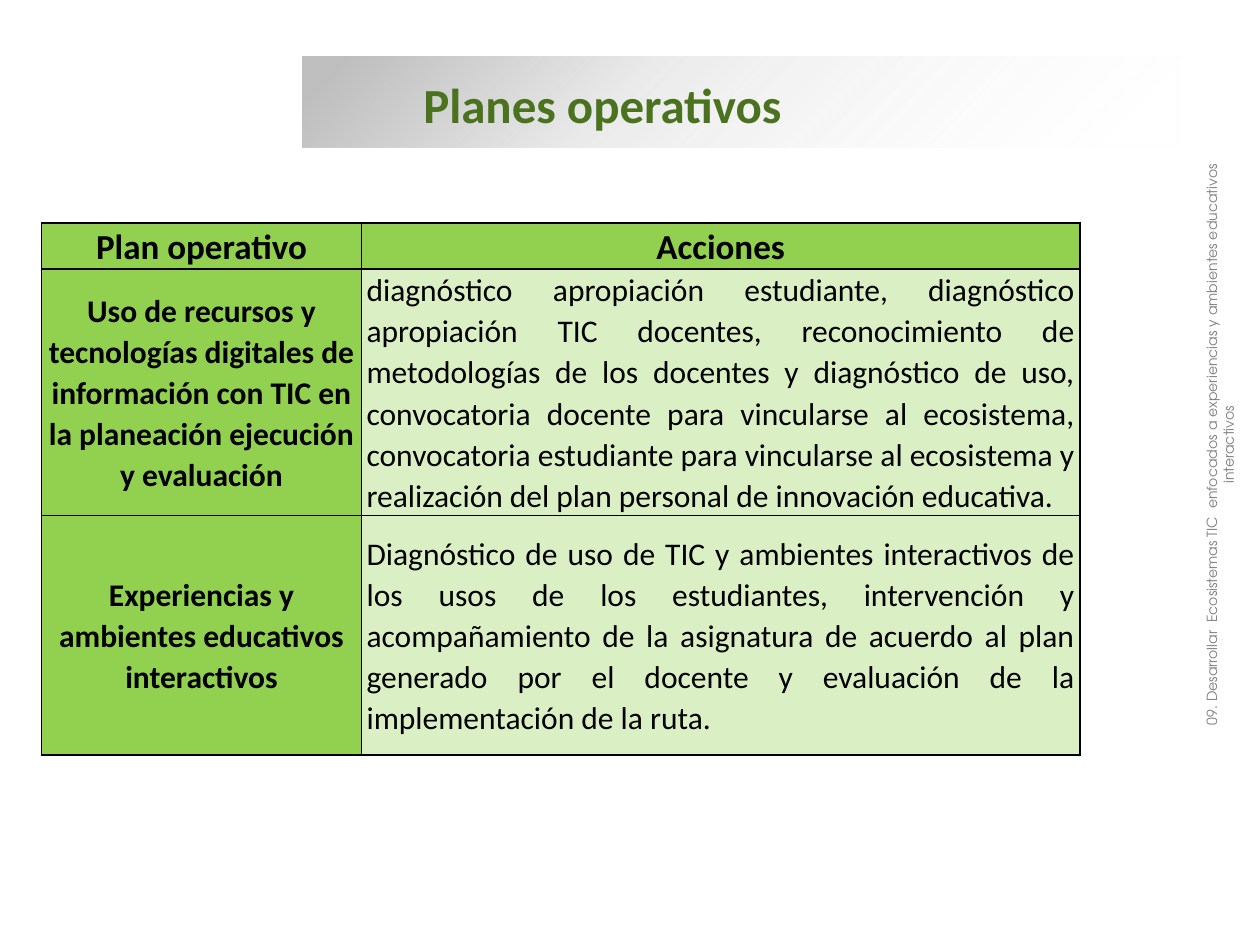
"""Builds the slide "Planes operativos" with its table of plans and actions."""
from dataclasses import dataclass

from lxml import etree
from pptx import Presentation
from pptx.dml.color import RGBColor
from pptx.enum import shapes, text
from pptx.oxml import ns
from pptx.util import Inches, Pt


@dataclass(frozen=True)
class Theme:
    """Colours, fonts and type sizes of the slide."""
    title: str = "4B731F"
    ink: str = "000000"
    muted: str = "808080"
    head_fill: str = "92D050"
    body_fill: str = "DAEFC3"
    band: str = "BFBFBF"
    white: str = "FFFFFF"
    font: str = "Calibri"
    side_font: str = "TeX Gyre Adventor"
    title_size: int = 28
    head_size: int = 20
    body_size: int = 18
    side_size: int = 8


@dataclass(frozen=True)
class Box:
    """A place on the slide in inches."""
    left: float
    top: float
    width: float
    height: float

    def emu(self) -> tuple:
        """Return left, top, width and height as lengths."""
        return tuple(Inches(v) for v in (self.left, self.top, self.width, self.height))


@dataclass(frozen=True)
class Stop:
    """A gradient stop with percentages for position and opacity."""
    pos: int
    color: str
    alpha: int = 100


@dataclass(frozen=True)
class Plan:
    """A table row: the plan and its actions."""
    name: str
    actions: str
    height: float


THEME = Theme()
COLUMNS = (2.54, 5.7)
PLANS = (
    Plan("Plan operativo", "Acciones", 0.36),
    Plan("Uso de recursos y tecnologías digitales de información con TIC en la "
         "planeación ejecución y evaluación",
         "diagnóstico apropiación estudiante, diagnóstico apropiación TIC docentes, "
         "reconocimiento de metodologías de los docentes y diagnóstico de uso, "
         "convocatoria docente para vincularse al ecosistema, convocatoria estudiante "
         "para vincularse al ecosistema y realización del plan personal de innovación "
         "educativa.", 1.93),
    Plan("Experiencias y ambientes educativos interactivos",
         "Diagnóstico de uso de TIC y ambientes interactivos de los usos de los "
         "estudiantes, intervención y acompañamiento de la asignatura de acuerdo al "
         "plan generado por el docente y evaluación de la implementación de la ruta.", 1.9),
)


def add_run(p, words: str, size: int, color: str, font: str, bold: bool = False) -> None:
    """Add one formatted run to a paragraph."""
    r = p.add_run()
    r.text = words
    r.font.size, r.font.name, r.font.bold = Pt(size), font, bold
    r.font.color.rgb = RGBColor.from_string(color)


def add_fill(parent, color: str, alpha: int = 100) -> None:
    """Add an sRGB colour with opacity to an XML element."""
    clr = etree.SubElement(parent, ns.qn("a:srgbClr"), val=color)
    if alpha < 100:
        etree.SubElement(clr, ns.qn("a:alpha"), val=str(alpha * 1000))


def add_band(s, box: Box, stops: tuple, angle: int):
    """Draw a gradient band behind everything else."""
    sp = s.shapes.add_shape(shapes.MSO_SHAPE.RECTANGLE, *box.emu())
    sp.shadow.inherit = False
    sp.line.fill.background()
    sp.fill.background()
    grad = etree.Element(ns.qn("a:gradFill"), rotWithShape="1")
    stop_list = etree.SubElement(grad, ns.qn("a:gsLst"))
    for stop in stops:
        gs = etree.SubElement(stop_list, ns.qn("a:gs"), pos=str(stop.pos * 1000))
        add_fill(gs, stop.color, stop.alpha)
    etree.SubElement(grad, ns.qn("a:lin"), ang=str(angle * 60000), scaled="0")
    props = sp._element.spPr
    props.replace(props.find(ns.qn("a:noFill")), grad)
    s.shapes._spTree.insert(2, sp._element)
    return sp


def set_title(s, words: str, box: Box) -> None:
    """Place and format the title placeholder."""
    sp = s.shapes.title
    sp.left, sp.top, sp.width, sp.height = box.emu()
    tf = sp.text_frame
    tf.word_wrap = True
    tf.auto_size = text.MSO_AUTO_SIZE.NONE
    tf.vertical_anchor = text.MSO_ANCHOR.MIDDLE
    p = tf.paragraphs[0]
    p.alignment = text.PP_ALIGN.LEFT
    add_run(p, words, THEME.title_size, THEME.title, THEME.font, True)


def add_borders(cell, color: str, width: float) -> None:
    """Draw the four borders of a cell."""
    props = cell._tc.get_or_add_tcPr()
    for i, side in enumerate(("lnL", "lnR", "lnT", "lnB")):
        ln = etree.Element(ns.qn(f"a:{side}"), w=str(Pt(width)))
        add_fill(etree.SubElement(ln, ns.qn("a:solidFill")), color)
        props.insert(i, ln)


def fill_cell(cell, words: str, is_head: bool, is_label: bool) -> None:
    """Write and format one table cell."""
    strong = is_head or is_label
    cell.margin_left = cell.margin_right = Inches(0.04)
    cell.margin_top = cell.margin_bottom = 0
    cell.vertical_anchor = text.MSO_ANCHOR.MIDDLE
    cell.fill.solid()
    cell.fill.fore_color.rgb = RGBColor.from_string(
        THEME.head_fill if strong else THEME.body_fill)
    add_borders(cell, THEME.ink, 1)
    p = cell.text_frame.paragraphs[0]
    p.alignment = text.PP_ALIGN.CENTER if strong else text.PP_ALIGN.JUSTIFY
    p.line_spacing = 1.07
    size = THEME.head_size if is_head else THEME.body_size
    add_run(p, words, size, THEME.ink, THEME.font, strong)


def add_plans(s, left: float, top: float, plans: tuple) -> None:
    """Draw the table of plans."""
    box = Box(left, top, sum(COLUMNS), sum(plan.height for plan in plans))
    table = s.shapes.add_table(len(plans), len(COLUMNS), *box.emu()).table
    for column, width in zip(table.columns, COLUMNS):
        column.width = Inches(width)
    for i, plan in enumerate(plans):
        table.rows[i].height = Inches(plan.height)
        for j, words in enumerate((plan.name, plan.actions)):
            fill_cell(table.cell(i, j), words, i == 0, j == 0)


def add_side_note(s, words: str, box: Box) -> None:
    """Write the note that runs up the right edge."""
    sp = s.shapes.add_textbox(*box.emu())
    sp.rotation = 270
    tf = sp.text_frame
    tf.word_wrap = True
    p = tf.paragraphs[0]
    p.alignment = text.PP_ALIGN.CENTER
    add_run(p, words, THEME.side_size, THEME.muted, THEME.side_font)


def main() -> None:
    """Build and save the presentation."""
    prs = Presentation()
    prs.slide_width, prs.slide_height = Inches(10), Inches(7.5)
    s = prs.slides.add_slide(prs.slide_layouts[5])
    stops = (Stop(5, THEME.band), Stop(37, THEME.band, 31), Stop(100, THEME.white, 0))
    add_band(s, Box(2.4, 0.45, 6.98, 0.72), stops, 45)
    set_title(s, "Planes operativos", Box(3.26, 0.54, 6.2, 0.57))
    add_plans(s, 0.33, 1.77, PLANS)
    add_side_note(s, "09. Desarrollar  Ecosistemas TIC  enfocados a experiencias y "
                  "ambientes educativos interactivos", Box(7.33, 3.28, 4.84, 0.5))
    prs.save("out.pptx")


if __name__ == "__main__":
    main()
